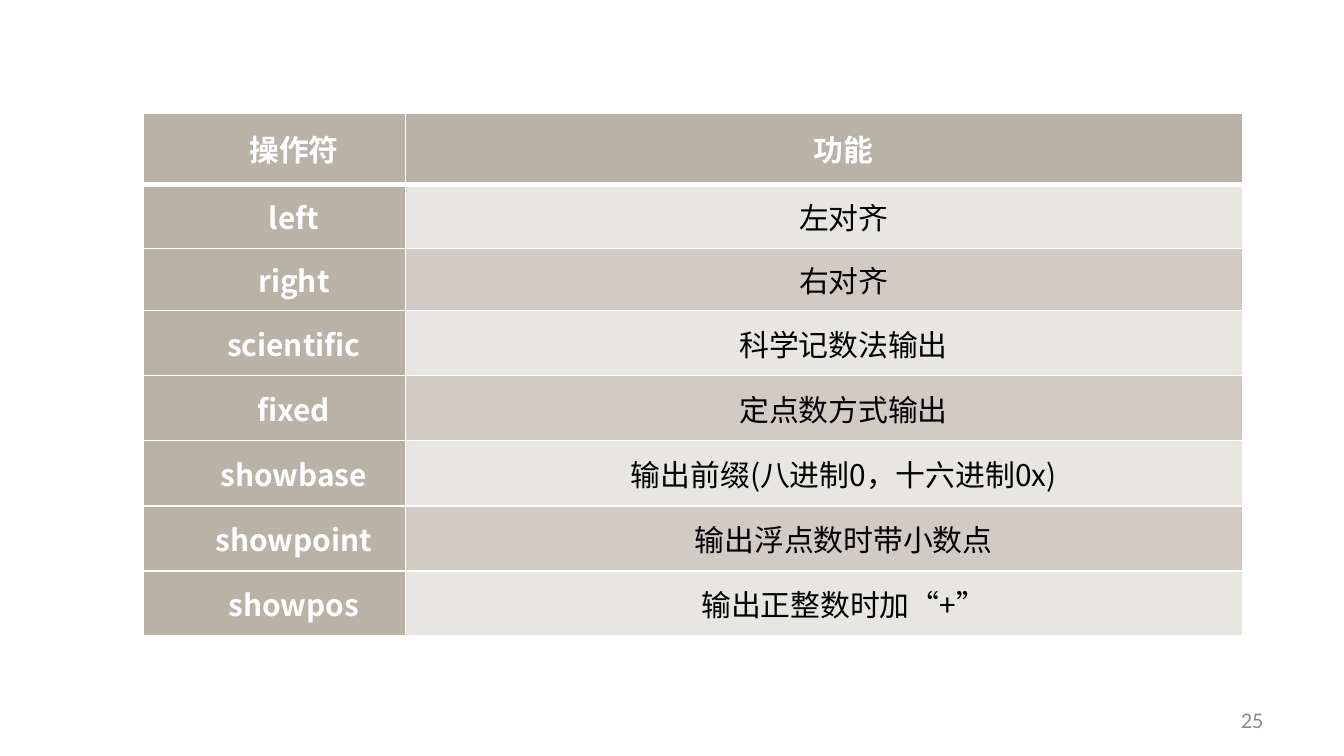
import pptx
import pptx.dml.color
import pptx.enum.text
import pptx.oxml
import pptx.oxml.ns
import pptx.util

Cm = pptx.util.Cm
Pt = pptx.util.Pt
ALIGN = pptx.enum.text.PP_ALIGN
MIDDLE = pptx.enum.text.MSO_ANCHOR.MIDDLE

COLORS = {
    "head": "B8B3A6",
    "light": "E7E6E1",
    "dark": "D0CCC4",
    "white": "FFFFFF",
    "black": "000000",
    "number": "8C8C8C",
}
FONT = "Noto Sans CJK SC"
ROWS = [
    ("操作符", "功能"),
    ("left", "左对齐"),
    ("right", "右对齐"),
    ("scientific", "科学记数法输出"),
    ("fixed", "定点数方式输出"),
    ("showbase", "输出前缀(八进制0，十六进制0x)"),
    ("showpoint", "输出浮点数时带小数点"),
    ("showpos", "输出正整数时加“+”"),
]
COL_WIDTHS = [4.95, 15.83]
ROW_HEIGHTS = [1.34, 1.22, 1.17] + [1.23] * 5


def rgb(name):
    """Return the named colour."""
    return pptx.dml.color.RGBColor.from_string(COLORS[name])


def write(tf, text, size=16, font=FONT, color="black", bold=False, align=ALIGN.CENTER, indent=0):
    """Write one formatted paragraph into a text frame."""
    p = tf.paragraphs[0]
    p.alignment = align
    if indent:
        p._p.get_or_add_pPr().set("indent", str(Cm(indent)))
    r = p.add_run()
    r.text = text
    r.font.size = Pt(size)
    r.font.bold = bold
    r.font.color.rgb = rgb(color)
    r.font.name = font
    ea = pptx.oxml.parse_xml(f'<a:ea {pptx.oxml.ns.nsdecls("a")} typeface="{font}"/>')
    r.font._element.append(ea)


def set_borders(cell, color="white", **widths):
    """Draw cell borders of the given widths in points, keyed by side."""
    tcPr = cell._tc.get_or_add_tcPr()
    for i, (side, width) in enumerate(widths.items()):
        tcPr.insert(i, pptx.oxml.parse_xml(
            f'<a:ln{side} {pptx.oxml.ns.nsdecls("a")} w="{Pt(width)}"><a:solidFill>'
            f'<a:srgbClr val="{COLORS[color]}"/></a:solidFill></a:ln{side}>'))


def add_operator_table(slide, left, top, width, height):
    """Add the table of stream operators with banded rows."""
    table = slide.shapes.add_table(
        len(ROWS), len(COL_WIDTHS), Cm(left), Cm(top), Cm(width), Cm(height)).table
    for column, w in zip(table.columns, COL_WIDTHS):
        column.width = Cm(w)
    for i, (row, h, texts) in enumerate(zip(table.rows, ROW_HEIGHTS, ROWS)):
        row.height = Cm(h)
        for j, (cell, text) in enumerate(zip(row.cells, texts)):
            heading = i == 0 or j == 0
            band = "light" if i % 2 else "dark"
            cell.margin_left = cell.margin_right = Cm(0.18)
            cell.margin_top = cell.margin_bottom = 0
            cell.vertical_anchor = MIDDLE
            cell.fill.solid()
            cell.fill.fore_color.rgb = rgb("head" if heading else band)
            set_borders(cell, L=1, R=1, T=3 if i == 1 else 1, B=3 if i == 0 else 1)
            write(cell.text_frame, text, color="white" if heading else "black",
                  bold=heading, indent=0.74)


def add_slide_number(slide, left, top, width, height):
    """Add the slide number in the lower right corner."""
    sp = slide.shapes.add_textbox(Cm(left), Cm(top), Cm(width), Cm(height))
    tf = sp.text_frame
    tf.word_wrap = True
    tf.vertical_anchor = MIDDLE
    write(tf, "25", size=12, font="Calibri", color="number", align=ALIGN.RIGHT)


def main():
    """Build the slide and save it."""
    prs = pptx.Presentation()
    prs.slide_width, prs.slide_height = Cm(25.4), Cm(14.29)
    s = prs.slides.add_slide(prs.slide_layouts[6])
    add_slide_number(s, 18.21, 13.23, 5.92, 0.76)
    add_operator_table(s, 2.71, 2.14, sum(COL_WIDTHS), sum(ROW_HEIGHTS))
    prs.save("out.pptx")


if __name__ == "__main__":
    main()
